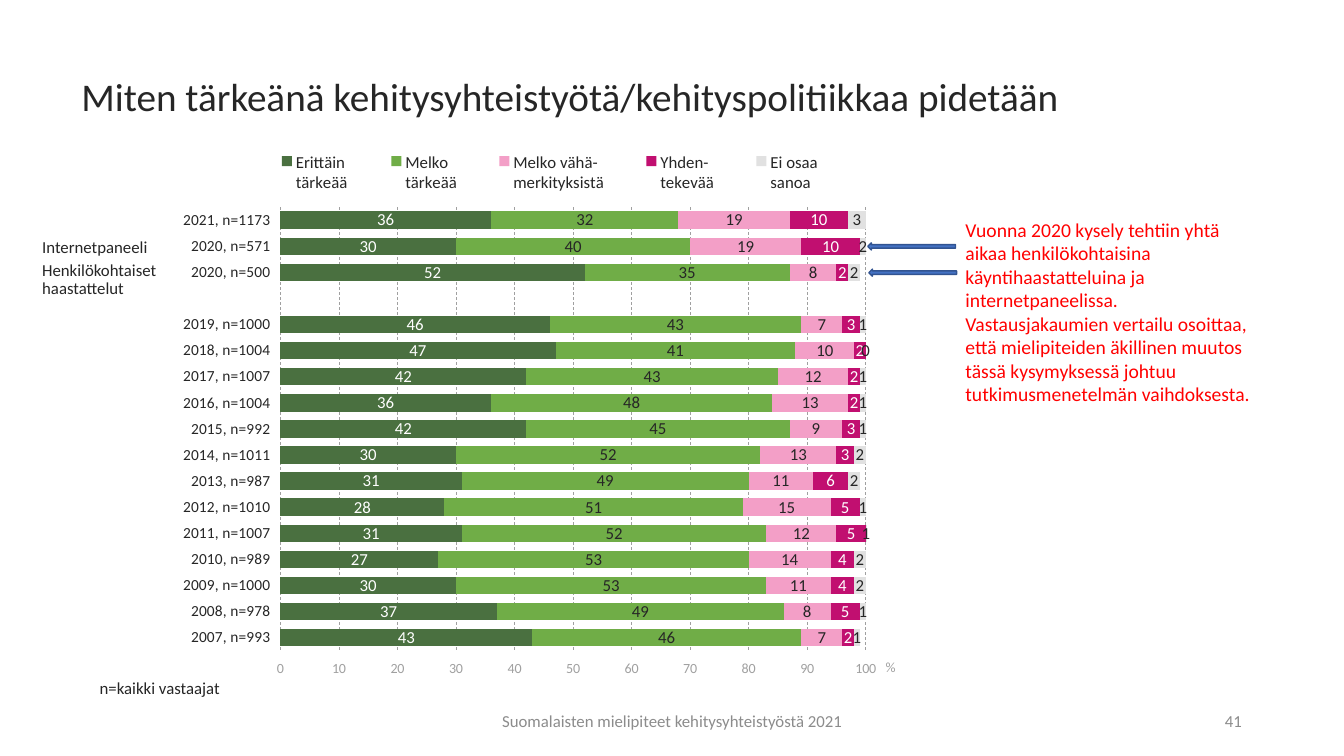
"""Build the slide on how important Finns consider development cooperation."""
import lxml.etree
import pptx
import pptx.chart.data
import pptx.dml.color
import pptx.enum.chart
import pptx.enum.dml
import pptx.enum.shapes
import pptx.enum.text
import pptx.oxml.ns
import pptx.util

PX = 9144
SLIDE_WIDTH = pptx.util.Emu(12192000)
SLIDE_HEIGHT = pptx.util.Emu(6858000)
FONT = "Calibri"
INK = pptx.dml.color.RGBColor(0x26, 0x26, 0x26)
WHITE = pptx.dml.color.RGBColor(0xFF, 0xFF, 0xFF)
RED = pptx.dml.color.RGBColor(0xFF, 0x00, 0x00)
FOOTER_GRAY = pptx.dml.color.RGBColor(0x8C, 0x8C, 0x8C)
AXIS_GRAY = pptx.dml.color.RGBColor(0xA0, 0xA0, 0xA0)
DARK_GREEN = pptx.dml.color.RGBColor(0x4A, 0x70, 0x40)
GREEN = pptx.dml.color.RGBColor(0x70, 0xAD, 0x47)
PINK = pptx.dml.color.RGBColor(0xF3, 0x9F, 0xC7)
MAGENTA = pptx.dml.color.RGBColor(0xC1, 0x0F, 0x70)
LIGHT_GRAY = pptx.dml.color.RGBColor(0xE1, 0xE1, 0xE1)
ARROW_FILL = pptx.dml.color.RGBColor(0x44, 0x72, 0xC4)
ARROW_LINE = pptx.dml.color.RGBColor(0x32, 0x54, 0x91)

ANSWERS = [
    ("Erittäin \ntärkeää", DARK_GREEN, WHITE),
    ("Melko \ntärkeää", GREEN, INK),
    ("Melko vähä-\nmerkityksistä", PINK, INK),
    ("Yhden-\ntekevää", MAGENTA, WHITE),
    ("Ei osaa \nsanoa", LIGHT_GRAY, INK),
]
SURVEYS = [
    ("2021, n=1173", (36, 32, 19, 10, 3)),
    ("2020, n=571", (30, 40, 19, 10, 2)),
    ("2020, n=500", (52, 35, 8, 2, 2)),
    ("", (None,) * len(ANSWERS)),
    ("2019, n=1000", (46, 43, 7, 3, 1)),
    ("2018, n=1004", (47, 41, 10, 2, 0)),
    ("2017, n=1007", (42, 43, 12, 2, 1)),
    ("2016, n=1004", (36, 48, 13, 2, 1)),
    ("2015, n=992", (42, 45, 9, 3, 1)),
    ("2014, n=1011", (30, 52, 13, 3, 2)),
    ("2013, n=987", (31, 49, 11, 6, 2)),
    ("2012, n=1010", (28, 51, 15, 5, 1)),
    ("2011, n=1007", (31, 52, 12, 5, 1)),
    ("2010, n=989", (27, 53, 14, 4, 2)),
    ("2009, n=1000", (30, 53, 11, 4, 2)),
    ("2008, n=978", (37, 49, 8, 5, 1)),
    ("2007, n=993", (43, 46, 7, 2, 1)),
]
COMMENT = (
    "Vuonna 2020 kysely tehtiin yhtä aikaa henkilökohtaisina "
    "käyntihaastatteluina ja internetpaneelissa. Vastausjakaumien vertailu "
    "osoittaa, että mielipiteiden äkillinen muutos tässä kysymyksessä johtuu "
    "tutkimusmenetelmän vaihdoksesta."
)


def scaled(bounds):
    """Turn px lengths into EMU."""
    return [pptx.util.Emu(length * PX) for length in bounds]


def style_font(font, size, color):
    """Set the face, size and colour of a font."""
    font.name = FONT
    font.size = pptx.util.Pt(size)
    font.bold = False
    font.color.rgb = color


def add_text(page, bounds, text, size=12, color=INK, align="LEFT",
             anchor="TOP", spacing=1.0):
    """Add a wrapped text box holding one paragraph."""
    frame = page.shapes.add_textbox(*scaled(bounds)).text_frame
    frame.word_wrap = True
    frame.vertical_anchor = getattr(pptx.enum.text.MSO_ANCHOR, anchor)
    para = frame.paragraphs[0]
    para.alignment = getattr(pptx.enum.text.PP_ALIGN, align)
    para.line_spacing = spacing
    span = para.add_run()
    span.text = text
    style_font(span.font, size, color)


def add_arrow(page, bounds):
    """Add a thin block arrow pointing left."""
    arrow = page.shapes.add_shape(
        pptx.enum.shapes.MSO_SHAPE.LEFT_ARROW, *scaled(bounds))
    arrow.shadow.inherit = False
    arrow.fill.solid()
    arrow.fill.fore_color.rgb = ARROW_FILL
    arrow.line.color.rgb = ARROW_LINE
    arrow.line.width = pptx.util.Pt(1)


def set_layout(parent, index, inner=False, **fractions):
    """Place a chart part at fractions of the chart area."""
    qn = pptx.oxml.ns.qn
    layout = parent.find(qn("c:layout"))
    if layout is None:
        layout = lxml.etree.Element(qn("c:layout"))
        parent.insert(index, layout)
    manual = lxml.etree.SubElement(layout, qn("c:manualLayout"))
    settings = {"layoutTarget": "inner"} if inner else {}
    settings.update(xMode="edge", yMode="edge", **fractions)
    for name, value in settings.items():
        lxml.etree.SubElement(manual, qn("c:" + name)).set("val", str(value))


def style_axes(chart):
    """Style the survey axis and the percentage axis."""
    enums = pptx.enum.chart
    surveys, percent = chart.category_axis, chart.value_axis
    for axis, size, color in ((surveys, 11, INK), (percent, 10, AXIS_GRAY)):
        axis.major_tick_mark = enums.XL_TICK_MARK.NONE
        axis.minor_tick_mark = enums.XL_TICK_MARK.NONE
        axis.format.line.fill.background()
        style_font(axis.tick_labels.font, size, color)
    surveys.reverse_order = True
    surveys.tick_label_position = enums.XL_TICK_LABEL_POSITION.LOW
    percent.tick_label_position = enums.XL_TICK_LABEL_POSITION.HIGH
    percent.minimum_scale = 0
    percent.maximum_scale = 100.01
    percent.major_unit = 10
    percent.tick_labels.number_format = "General"
    percent.tick_labels.number_format_is_linked = False
    grid = percent.major_gridlines.format.line
    grid.color.rgb = AXIS_GRAY
    grid.width = pptx.util.Pt(0.5)
    grid.dash_style = pptx.enum.dml.MSO_LINE.DASH
    title = percent.axis_title
    span = title.text_frame.paragraphs[0].add_run()
    span.text = "%"
    style_font(span.font, 10, AXIS_GRAY)
    set_layout(title._element, 1, x=0.95, y=0.935)


def add_answer_chart(page, bounds):
    """Add the stacked bar chart of answers by survey."""
    enums = pptx.enum.chart
    data = pptx.chart.data.CategoryChartData(number_format="#,##0")
    data.categories = [label for label, _ in SURVEYS]
    shares = zip(*(values for _, values in SURVEYS))
    for (name, _, _), values in zip(ANSWERS, shares):
        data.add_series(name, values)
    chart = page.shapes.add_chart(
        enums.XL_CHART_TYPE.BAR_STACKED, *scaled(bounds), data).chart
    style_font(chart.font, 12, INK)
    chart.has_title = False
    chart.has_legend = True
    chart.legend.position = enums.XL_LEGEND_POSITION.TOP
    chart.legend.include_in_layout = False
    style_font(chart.legend.font, 12, INK)
    set_layout(chart.legend._element, 1, x=0.246, y=0.021, w=0.677, h=0.09)
    plot = chart.plots[0]
    plot.gap_width = 50
    plot.overlap = 100
    plot.vary_by_categories = False
    set_layout(plot._element.getparent(), 0, inner=True,
               x=0.285, y=0.128, w=0.646, h=0.799)
    for series, (_, fill, label_color) in zip(plot.series, ANSWERS):
        series.format.fill.solid()
        series.format.fill.fore_color.rgb = fill
        series.invert_if_negative = False
        labels = series.data_labels
        labels.show_value = True
        labels.number_format = "#,##0"
        labels.number_format_is_linked = False
        labels.position = enums.XL_LABEL_POSITION.CENTER
        style_font(labels.font, 12, label_color)
    style_axes(chart)


def main():
    """Build the slide and save it."""
    deck = pptx.Presentation()
    deck.slide_width, deck.slide_height = SLIDE_WIDTH, SLIDE_HEIGHT
    page = deck.slides.add_slide(deck.slide_layouts[6])
    add_text(page, (442, 695, 450, 40),
             "Suomalaisten mielipiteet kehitysyhteistyöstä 2021",
             color=FOOTER_GRAY, align="CENTER", anchor="MIDDLE")
    add_text(page, (942, 695, 300, 40), "41",
             color=FOOTER_GRAY, align="RIGHT", anchor="MIDDLE")
    add_text(page, (71, 64, 1207, 68),
             "Miten tärkeänä kehitysyhteistyötä/kehityspolitiikkaa pidetään",
             size=28, anchor="MIDDLE", spacing=0.9)
    add_answer_chart(page, (22, 135, 899, 551))
    add_text(page, (89, 670, 918, 28), "n=kaikki vastaajat", spacing=0.9)
    add_text(page, (32, 232, 135, 28), "Internetpaneeli", spacing=0.9)
    add_text(page, (32, 255, 135, 28), "Henkilökohtaiset haastattelut",
             spacing=0.9)
    add_text(page, (948, 211, 313, 199), COMMENT, size=14, color=RED)
    add_arrow(page, (861, 241, 87, 7))
    add_arrow(page, (862, 267, 87, 7))
    deck.save("out.pptx")


if __name__ == "__main__":
    main()
